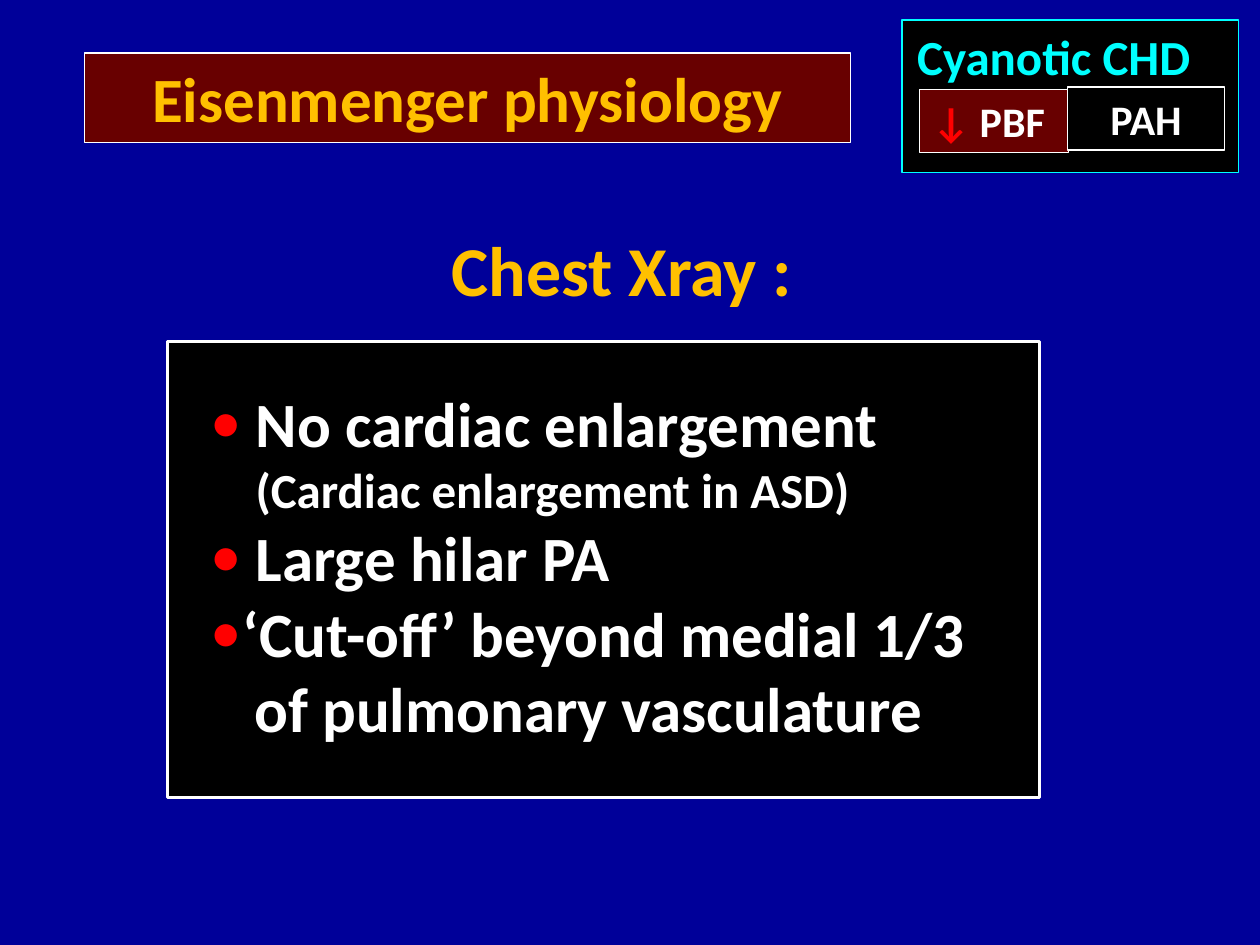
from lxml.etree import SubElement
from pptx import Presentation
from pptx.dml.color import RGBColor
from pptx.enum.shapes import MSO_SHAPE
from pptx.enum.text import MSO_ANCHOR, PP_ALIGN
from pptx.oxml.ns import qn
from pptx.util import Inches, Pt

COLORS = {
    "navy": "000099", "black": "000000", "white": "FFFFFF", "maroon": "680000",
    "gold": "FFC000", "cyan": "00FFFF", "red": "FF0000",
}
FINDINGS = [  # text, size, bulleted, text indent
    ("No cardiac enlargement", 36, True, 0.36),
    ("(Cardiac enlargement in ASD)", 28, False, 0.36),
    ("Large hilar PA", 36, True, 0.36),
    ("‘Cut-off’ beyond medial 1/3", 36, True, 0.26),
    ("of pulmonary vasculature", 36, False, 0.35),
]


def rgb(name):
    return RGBColor.from_string(COLORS[name])


def add_box(s, x, y, w, h, fill, line, width=0.75):
    box = s.shapes.add_shape(MSO_SHAPE.RECTANGLE, Inches(x), Inches(y), Inches(w), Inches(h))
    box.shadow.inherit = False
    box.fill.solid()
    box.fill.fore_color.rgb = rgb(fill)
    box.line.color.rgb = rgb(line)
    box.line.width = Pt(width)
    return box


def add_run(p, text, size, color):
    r = p.add_run()
    r.text = text
    for name, value in {"name": "Calibri", "size": Pt(size), "bold": True}.items():
        setattr(r.font, name, value)
    r.font.color.rgb = rgb(color)


def set_text(shape, runs, size, align=PP_ALIGN.CENTER, wrap=True):
    """Fill a shape with one line made of (text, colour) runs."""
    tf = shape.text_frame
    tf.word_wrap = wrap
    tf.vertical_anchor = MSO_ANCHOR.TOP
    p = tf.paragraphs[0]
    p.alignment = align
    for text, color in runs:
        add_run(p, text, size, color)


def set_indent(p, indent, bulleted):
    pPr = p._p.get_or_add_pPr()
    pPr.set("marL", str(Inches(indent)))
    pPr.set("indent", str(-Inches(indent) if bulleted else 0))
    if bulleted:
        color = SubElement(pPr, qn("a:buClr"))
        SubElement(color, qn("a:srgbClr"), val=COLORS["red"])
        SubElement(pPr, qn("a:buFont"), typeface="Calibri")
        SubElement(pPr, qn("a:buChar"), char="•")
    else:
        SubElement(pPr, qn("a:buNone"))


def add_title(s, x, y, w, h):
    set_text(add_box(s, x, y, w, h, "maroon", "white"),
             [("Eisenmenger physiology", "gold")], 36)


def add_category_card(s, x, y, w, h):
    card = add_box(s, x, y, w, h, "black", "cyan")
    card.text_frame.margin_left = Inches(0.12)
    set_text(card, [("Cyanotic CHD", "cyan")], 28, PP_ALIGN.LEFT)
    flow = add_box(s, x + 0.14, y + 0.55, 1.18, 0.5, "maroon", "white")
    set_text(flow, [("↓", "red"), (" PBF", "white")], 24, PP_ALIGN.LEFT, wrap=False)
    pressure = add_box(s, x + 1.31, y + 0.53, 1.25, 0.5, "black", "white")
    set_text(pressure, [("PAH", "white")], 24)


def add_findings(s, x, y, w, h):
    """Place the heading above a framed list of findings."""
    add_box(s, x, y, w, h, "black", "white", 2)
    heading = s.shapes.add_textbox(Inches(x + 2.09), Inches(y - 0.96), Inches(3.03), Inches(0.77))
    set_text(heading, [("Chest Xray :", "gold")], 40, wrap=False)
    body = s.shapes.add_textbox(Inches(x + 0.24), Inches(y + 0.29), Inches(6.25), Inches(3))
    tf = body.text_frame
    tf.word_wrap = True
    for i, (text, size, bulleted, indent) in enumerate(FINDINGS):
        p = tf.add_paragraph() if i else tf.paragraphs[0]
        set_indent(p, indent, bulleted)
        add_run(p, text, size, "white")


def main():
    prs = Presentation()
    prs.slide_width, prs.slide_height = Inches(10), Inches(7.5)
    s = prs.slides.add_slide(prs.slide_layouts[6])
    s.background.fill.solid()
    s.background.fill.fore_color.rgb = rgb("navy")
    add_findings(s, 1.33, 2.71, 6.92, 3.62)
    add_category_card(s, 7.16, 0.16, 2.67, 1.21)
    add_title(s, 0.67, 0.42, 6.08, 0.71)
    prs.save("out.pptx")


if __name__ == "__main__":
    main()
